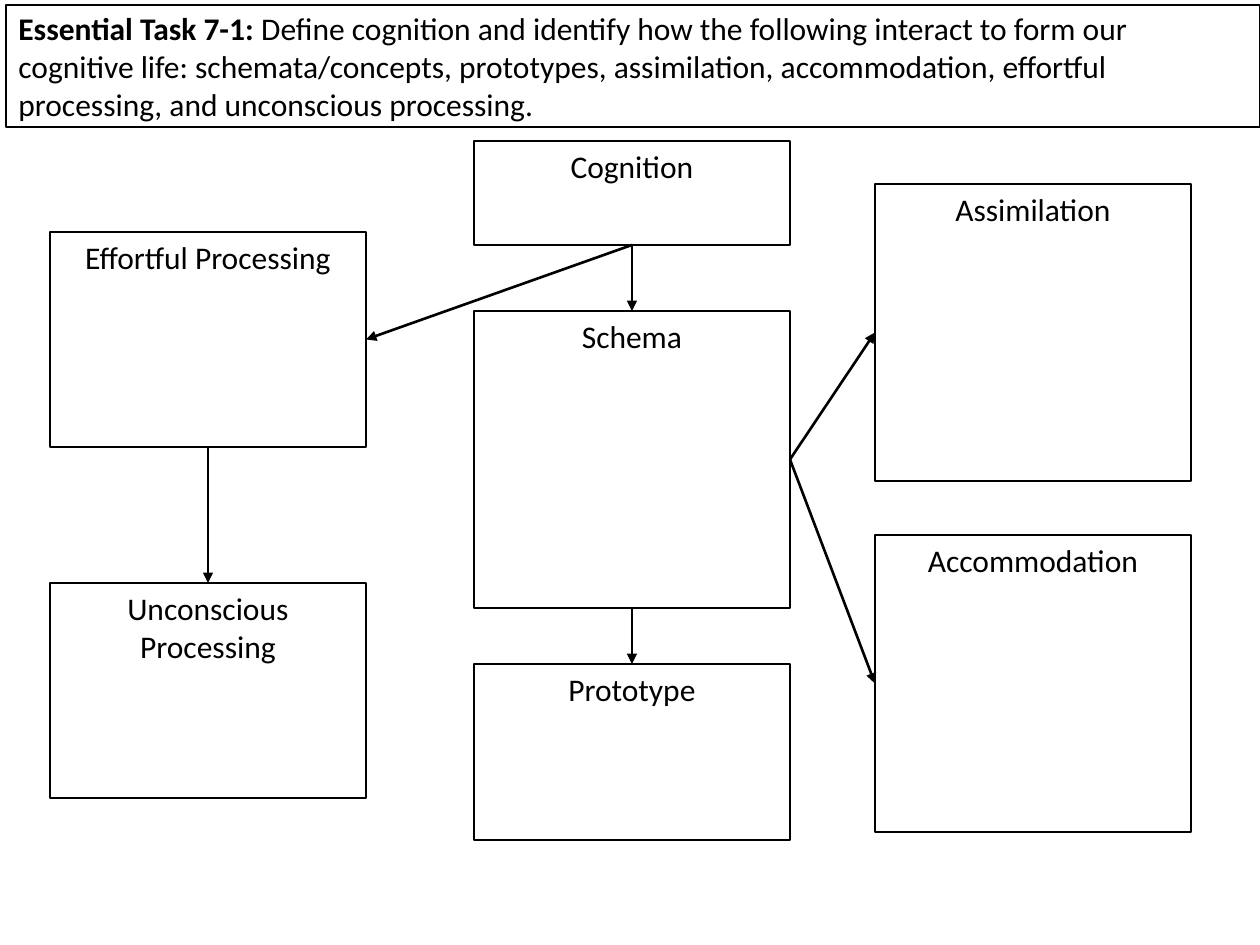
from pptx import Presentation
from pptx import util as u
from pptx.dml.color import RGBColor
from pptx.enum import shapes, text
from pptx.oxml import ns, xmlchemy

BLACK = RGBColor(0, 0, 0)
WHITE = RGBColor(255, 255, 255)
SCALE = 914400 / 126
WIDE = 316

TASK = [
    ("Essential Task 7-1: ", True),
    ("Define cognition and identify how the following interact to form our "
     "cognitive life: schemata/concepts, prototypes, assimilation, "
     "accommodation, effortful processing, and unconscious processing.", False),
]
COLUMNS = [
    (474, [("Schema", 311, 297), ("Prototype", 664, 176), ("Cognition", 141, 104)]),
    (875, [("Assimilation", 184, 297), ("Accommodation", 535, 297)]),
    (50, [("Effortful Processing", 232, 215), ("Unconscious Processing", 583, 215)]),
]
TOP, LEFT, BOTTOM, RIGHT = range(4)
LINKS = [
    ("Cognition", BOTTOM, "Effortful Processing", RIGHT),
    ("Effortful Processing", BOTTOM, "Unconscious Processing", TOP),
    ("Schema", BOTTOM, "Prototype", TOP),
    ("Schema", RIGHT, "Accommodation", LEFT),
    ("Schema", RIGHT, "Assimilation", LEFT),
    ("Cognition", BOTTOM, "Schema", TOP),
]


def px(n):
    return u.Emu(round(n * SCALE))


def add_box(slide, x, y, w, h, runs, anchor, align):
    box = slide.shapes.add_shape(shapes.MSO_SHAPE.RECTANGLE, px(x), px(y), px(w), px(h))
    box.shadow.inherit = False
    box.fill.solid()
    box.fill.fore_color.rgb = WHITE
    box.line.color.rgb = BLACK
    box.line.width = u.Pt(1)
    frame = box.text_frame
    frame.word_wrap = True
    frame.vertical_anchor = anchor
    para = frame.paragraphs[0]
    para.alignment = align
    font = para.font
    font.name, font.size, font.color.rgb = "Calibri", u.Pt(18), BLACK
    for words, bold in runs:
        run = para.add_run()
        run.text = words
        run.font.bold = bold
    return box


def add_link(slide, start, exit, end, entry):
    link = slide.shapes.add_connector(shapes.MSO_CONNECTOR.STRAIGHT, 0, 0, 0, 0)
    link.begin_connect(start, exit)
    link.end_connect(end, entry)
    link.line.color.rgb = BLACK
    link.line.width = u.Pt(1.5)
    tip = xmlchemy.OxmlElement("a:tailEnd")
    tip.set("type", "triangle")
    props = link._element.spPr
    props.find(ns.qn("a:ln")).append(tip)
    props.append(xmlchemy.OxmlElement("a:effectLst"))


def main():
    deck = Presentation()
    deck.slide_width, deck.slide_height = px(1260), px(945)
    slide = deck.slides.add_slide(deck.slide_layouts[6])
    add_box(slide, 6, 5, 1254, 122, TASK, text.MSO_ANCHOR.MIDDLE, text.PP_ALIGN.LEFT)
    boxes = {}
    for x, items in COLUMNS:
        for name, y, h in items:
            boxes[name] = add_box(slide, x, y, WIDE, h, [(name, False)],
                                  text.MSO_ANCHOR.TOP, text.PP_ALIGN.CENTER)
    for start, exit, end, entry in LINKS:
        add_link(slide, boxes[start], exit, boxes[end], entry)
    deck.save("out.pptx")


if __name__ == "__main__":
    main()
